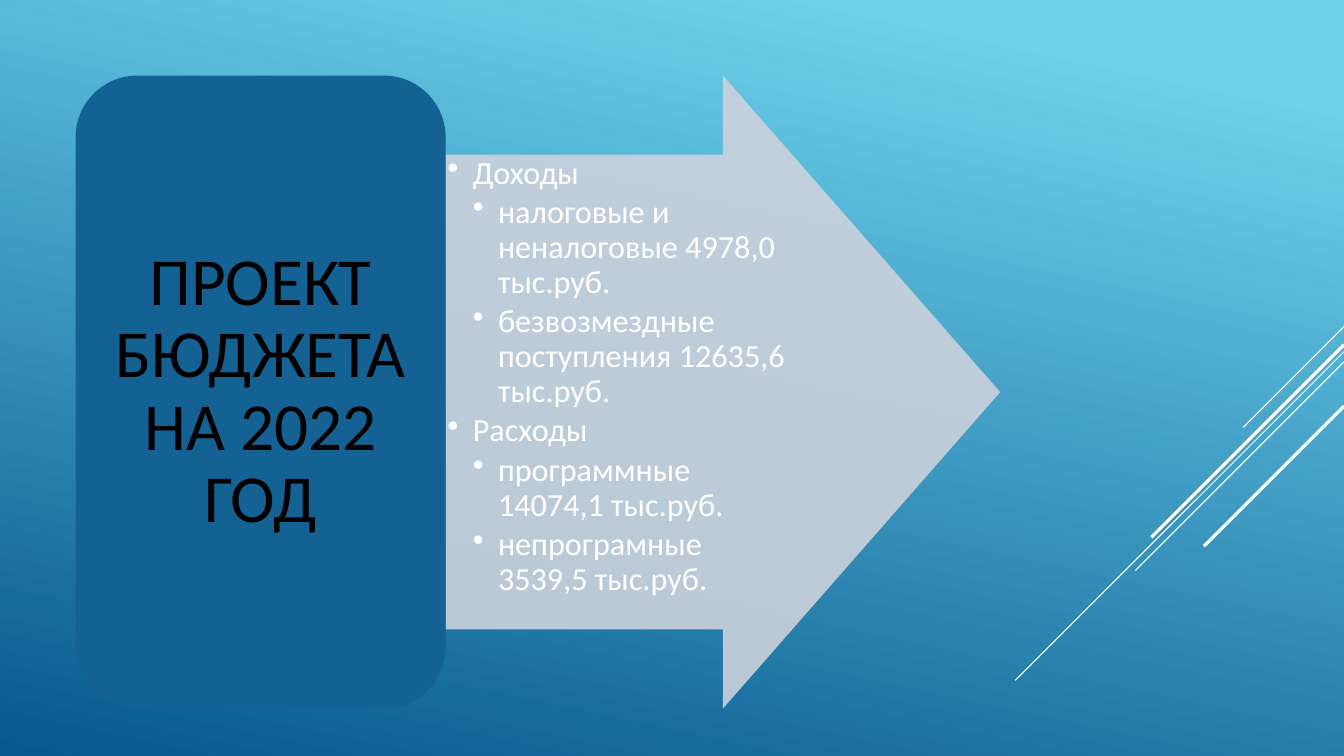
from lxml.etree import SubElement
from pptx import Presentation
from pptx.dml.color import RGBColor
from pptx.enum.shapes import MSO_CONNECTOR, MSO_SHAPE
from pptx.enum.text import MSO_ANCHOR, PP_ALIGN
from pptx.oxml.ns import qn
from pptx.util import Inches, Pt

WHITE, BLACK = "FFFFFF", "000000"
SKY, DEEP_BLUE = "6ED2EB", "06588E"
PANEL_BLUE, ARROW_GREY = "146194", "CCD2DC"


def color(hex_string):
    return RGBColor.from_string(hex_string)


class BudgetSlide:
    font = "Calibri"
    line_spacing = 0.9

    def __init__(self, presentation):
        self.slide = presentation.slides.add_slide(presentation.slide_layouts[6])

    def background(self, start, end, angle):
        """Fill with a linear gradient; angle is clockwise in degrees."""
        fill = self.slide.background.fill
        fill.gradient()
        fill.gradient_angle = 360 - angle
        for stop, (position, shade) in zip(fill.gradient_stops, (start, end)):
            stop.position = position
            stop.color.rgb = color(shade)

    def line(self, start, end, width):
        points = [Inches(v) for v in (*start, *end)]
        connector = self.slide.shapes.add_connector(MSO_CONNECTOR.STRAIGHT, *points)
        connector.line.color.rgb = color(WHITE)
        connector.line.width = Pt(width)
        SubElement(connector._element.spPr, qn("a:effectLst"))

    def shape(self, kind, box, fill, adjustments=(), opacity=100):
        shape = self.slide.shapes.add_shape(kind, *[Inches(v) for v in box])
        shape.shadow.inherit = False
        for index, value in enumerate(adjustments):
            shape.adjustments[index] = value
        shape.fill.solid()
        shape.fill.fore_color.rgb = color(fill)
        shape.line.fill.background()
        if opacity < 100:
            tint = shape._element.spPr.find(".//" + qn("a:srgbClr"))
            SubElement(tint, qn("a:alpha"), val=str(opacity * 1000))

    def text_box(self, box, insets, anchor):
        frame = self.slide.shapes.add_textbox(*[Inches(v) for v in box]).text_frame
        frame.word_wrap = True
        frame.vertical_anchor = anchor
        across, down = [Inches(v) for v in insets]
        frame.margin_left = frame.margin_right = across
        frame.margin_top = frame.margin_bottom = down
        return frame

    def format_paragraph(self, paragraph, size, shade, space_after):
        """Style a paragraph; space_after is a percentage of the line."""
        paragraph.line_spacing = self.line_spacing
        properties = paragraph._p.get_or_add_pPr()
        after = SubElement(properties, qn("a:spcAft"))
        SubElement(after, qn("a:spcPct"), val=str(space_after * 1000))
        for run in paragraph.runs:
            run.font.name = self.font
            run.font.size = Pt(size)
            run.font.color.rgb = color(shade)
        return properties

    def title(self, text, box):
        frame = self.text_box(box, (0.2, 0.1), MSO_ANCHOR.MIDDLE)
        frame.text = text
        paragraph = frame.paragraphs[0]
        paragraph.alignment = PP_ALIGN.CENTER
        self.format_paragraph(paragraph, 48, BLACK, 35)

    def bullets(self, items, box):
        frame = self.text_box(box, (0.02, 0.02), MSO_ANCHOR.TOP)
        frame.text = "\n".join(text for _, text in items)
        for paragraph, (level, _) in zip(frame.paragraphs, items):
            paragraph.level = level
            properties = self.format_paragraph(paragraph, 23, WHITE, 15)
            properties.set("marL", str(Inches(0.25 * level)))
            properties.set("indent", str(Inches(-0.25)))
            SubElement(properties, qn("a:buChar"), char="•")


def main():
    presentation = Presentation()
    presentation.slide_width = Inches(13.33)
    presentation.slide_height = Inches(7.5)
    budget = BudgetSlide(presentation)
    budget.background((0.1, SKY), (1, DEEP_BLUE), 102)

    # Diagonal rays leave the right edge at 45 degrees: height, reach, width
    right_edge = 13.33
    rays = [(3.24, 1.0, 0.75), (3.49, 3.26, 0.75), (3.59, 2.07, 0.75),
            (3.42, 1.91, 2.25), (4.03, 1.39, 2.25)]
    for top, reach, width in rays:
        budget.line((right_edge, top), (right_edge - reach, top + reach), width)

    budget.shape(MSO_SHAPE.RIGHT_ARROW, (4.42, 0.75, 5.5, 6.28), ARROW_GREY,
                 adjustments=(0.75, 0.5), opacity=90)
    budget.bullets([
        (1, "Доходы"),
        (2, "налоговые и неналоговые 4978,0 тыс.руб."),
        (2, "безвозмездные поступления 12635,6 тыс.руб."),
        (1, "Расходы"),
        (2, "программные 14074,1 тыс.руб."),
        (2, "непрограмные 3539,5 тыс.руб."),
    ], (4.42, 1.53, 3.44, 4.71))

    budget.shape(MSO_SHAPE.ROUNDED_RECTANGLE, (0.75, 0.75, 3.67, 6.28), PANEL_BLUE)
    budget.title("ПРОЕКТ БЮДЖЕТА НА 2022 ГОД", (0.93, 0.93, 3.31, 5.92))

    presentation.save("out.pptx")


if __name__ == "__main__":
    main()
